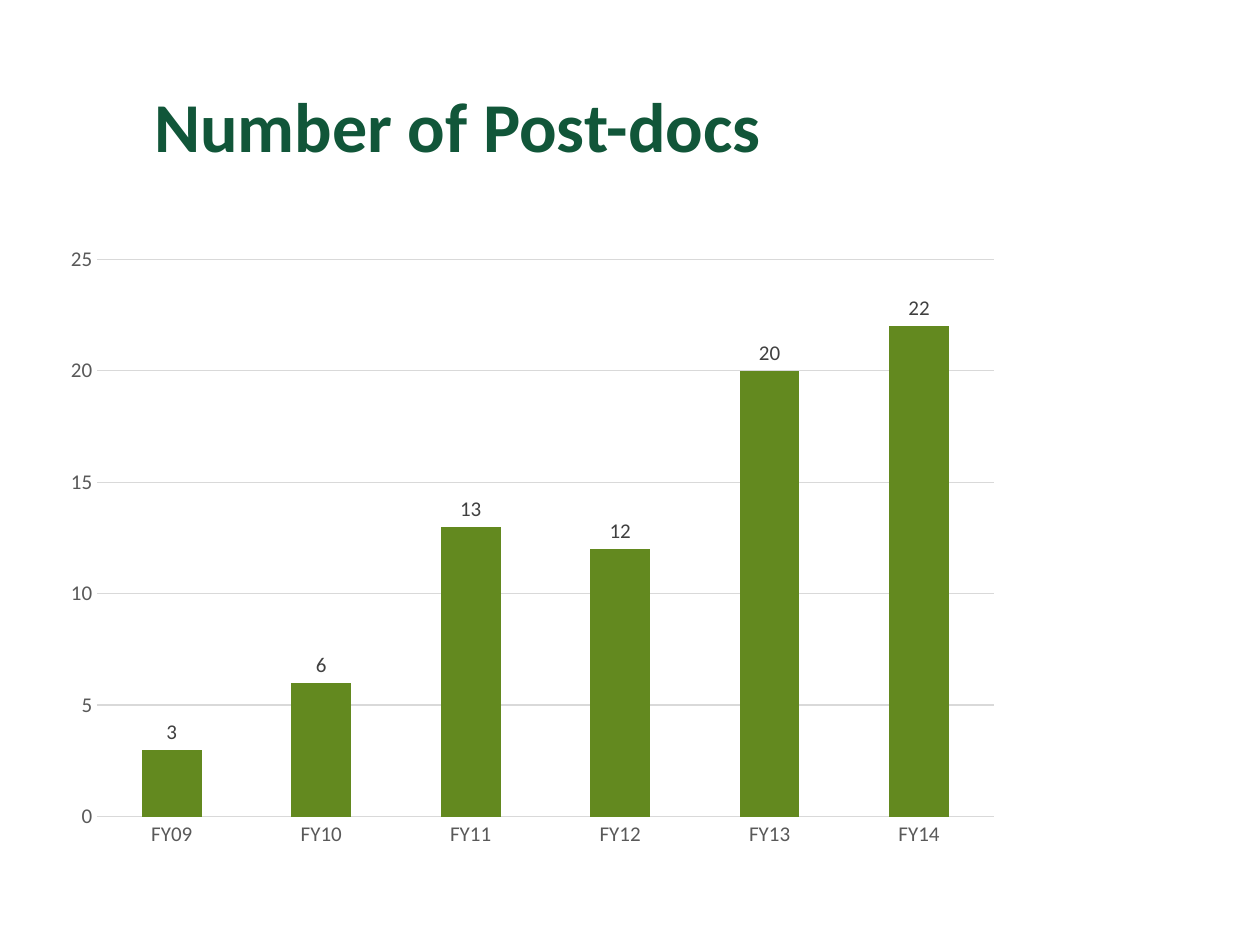
"""Build a slide with a column chart of post-doc numbers by fiscal year."""
from dataclasses import dataclass

from pptx import Presentation, util as u
from pptx.chart.data import CategoryChartData
from pptx.dml.color import RGBColor
from pptx.enum import chart as ch, text

WIDTH, HEIGHT = u.Inches(10), u.Inches(7.5)
FONT = "Calibri"
COLORS = {"title": "115639", "column": "63891F", "axis": "595959",
          "value": "404040", "grid": "D9D9D9"}
POSTDOCS = {"FY09": 3, "FY10": 6, "FY11": 13, "FY12": 12, "FY13": 20, "FY14": 22}


@dataclass(frozen=True)
class Area:
    left: float
    top: float
    width: float
    height: float

    def lengths(self) -> tuple[int, int, int, int]:
        return (round(self.left * WIDTH), round(self.top * HEIGHT),
                round(self.width * WIDTH), round(self.height * HEIGHT))


TITLE_AREA = Area(-0.087, 0.087, 0.9, 0.167)
CHART_AREA = Area(0.041, 0.248, 0.763, 0.661)


def rgb(name: str) -> RGBColor:
    return RGBColor.from_string(COLORS[name])


def style_font(font, *, size: float, color: str, bold: bool = False) -> None:
    font.name, font.size, font.bold = FONT, u.Pt(size), bold
    font.color.rgb = rgb(color)


def write(shape, words: str, *, align, anchor, **font_format) -> None:
    frame = shape.text_frame
    frame.word_wrap = True
    frame.auto_size = text.MSO_AUTO_SIZE.NONE
    frame.vertical_anchor = anchor
    frame.margin_top = 0
    paragraph = frame.paragraphs[0]
    paragraph.alignment = align
    run = paragraph.add_run()
    run.text = words
    style_font(run.font, **font_format)


def style_axis(axis) -> None:
    axis.major_tick_mark = axis.minor_tick_mark = ch.XL_TICK_MARK.NONE
    axis.format.line.fill.background()
    style_font(axis.tick_labels.font, size=12, color="axis")


def add_columns(slide, area: Area, counts: dict[str, int]) -> None:
    data = CategoryChartData()
    data.categories = list(counts)
    data.add_series("Series 1", list(counts.values()))
    chart = slide.shapes.add_chart(
        ch.XL_CHART_TYPE.COLUMN_CLUSTERED, *area.lengths(), data).chart
    chart.has_legend = chart.has_title = False
    style_font(chart.font, size=10, color="axis")

    for axis in (chart.category_axis, chart.value_axis):
        style_axis(axis)
    scale = chart.value_axis
    scale.minimum_scale, scale.maximum_scale, scale.major_unit = 0, 25, 5
    scale.has_major_gridlines = True
    grid = scale.major_gridlines.format.line
    grid.width = u.Pt(0.75)
    grid.color.rgb = rgb("grid")

    plot = chart.plots[0]
    plot.gap_width = 150
    plot.vary_by_categories = False
    columns = plot.series[0]
    columns.format.fill.solid()
    columns.format.fill.fore_color.rgb = rgb("column")
    labels = columns.data_labels
    labels.show_value = True
    labels.position = ch.XL_LABEL_POSITION.OUTSIDE_END
    style_font(labels.font, size=12, color="value")


def main() -> None:
    deck = Presentation()
    deck.slide_width, deck.slide_height = WIDTH, HEIGHT
    slide = deck.slides.add_slide(deck.slide_layouts[5])
    title = slide.shapes.title
    title.left, title.top, title.width, title.height = TITLE_AREA.lengths()
    write(title, "Number of Post-docs", align=text.PP_ALIGN.CENTER,
          anchor=text.MSO_ANCHOR.TOP, size=40, color="title", bold=True)
    add_columns(slide, CHART_AREA, POSTDOCS)
    deck.save("out.pptx")


if __name__ == "__main__":
    main()
